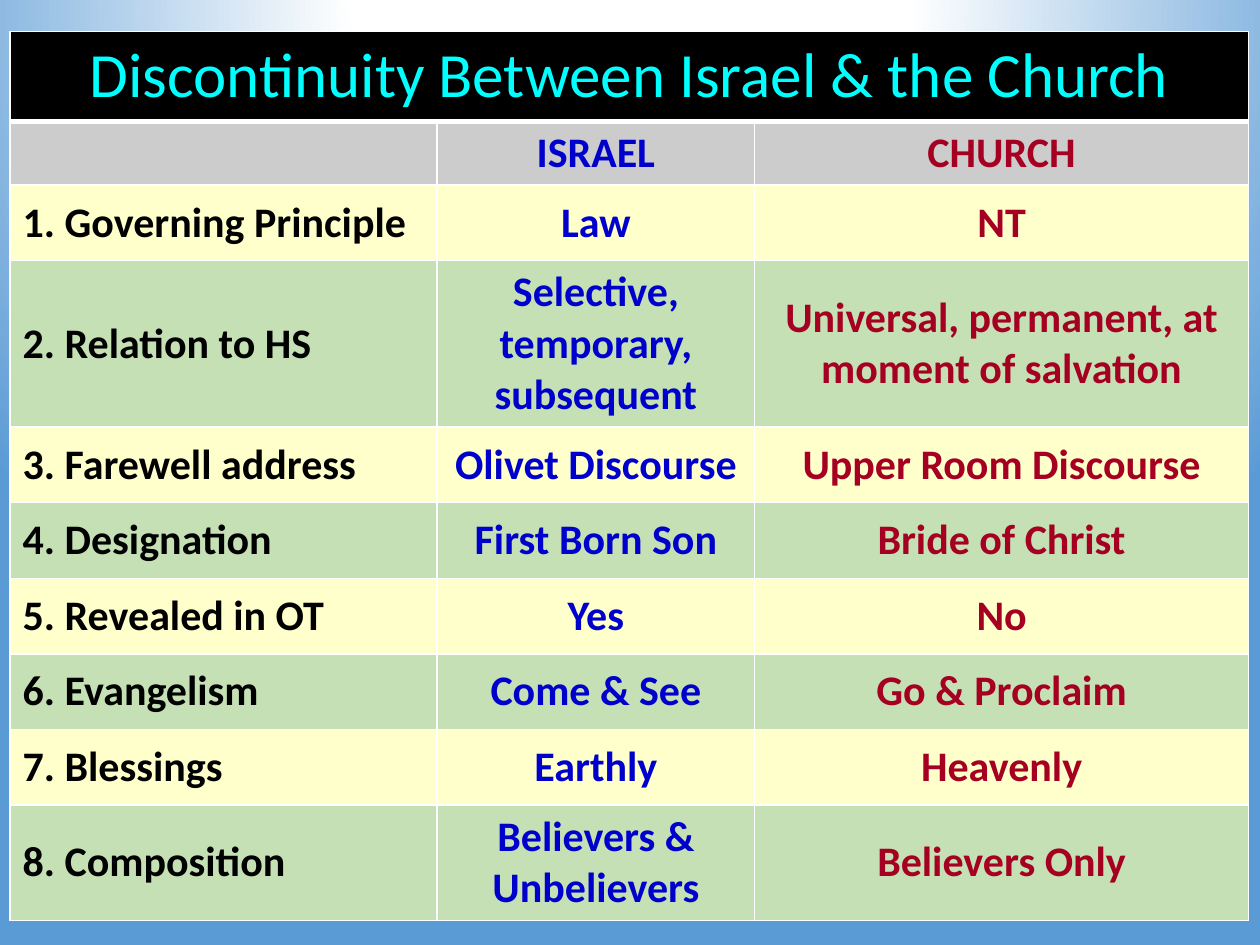
from pptx import Presentation
from pptx import util as u
from pptx.dml.color import RGBColor
from pptx.enum import text as t
from pptx.oxml import parse_xml
from pptx.oxml.ns import nsdecls

WIDE, HIGH = 10, 7.5
COLS = [3.39, 2.52, 3.92]
ROWS = [0.7, 0.5, 0.6, 1.32] + [0.6] * 5 + [0.9]
INKS = ["000000", "0000CC", "A50021"]
BANDS = ["FFFFCC", "C5E0B4"]
TITLE = "Discontinuity Between Israel & the Church"
HEADS = ["", "ISRAEL", "CHURCH"]
FACTS = [
    ("1. Governing Principle", "Law", "NT"),
    ("2. Relation to HS", "Selective, temporary, subsequent",
     "Universal, permanent, at moment of salvation"),
    ("3. Farewell address", "Olivet Discourse", "Upper Room Discourse"),
    ("4. Designation", "First Born Son", "Bride of Christ"),
    ("5. Revealed in OT", "Yes", "No"),
    ("6. Evangelism", "Come & See", "Go & Proclaim"),
    ("7. Blessings", "Earthly", "Heavenly"),
    ("8. Composition", "Believers & Unbelievers", "Believers Only"),
]


def color(code):
    return RGBColor.from_string(code)


def write(cell, words, size=24, ink="000000", bold=True, align="CENTER"):
    cell.vertical_anchor = t.MSO_ANCHOR.MIDDLE
    para = cell.text_frame.paragraphs[0]
    para.alignment = getattr(t.PP_ALIGN, align)
    if words:
        run = para.add_run()
        run.text = words
        font = run.font
        font.name, font.size, font.bold = "Calibri", u.Pt(size), bold
        font.color.rgb = color(ink)


def paint(cell, fill, base=1):
    props = cell._tc.get_or_add_tcPr()
    for side, width in (("L", 1), ("R", 1), ("T", 1), ("B", base)):
        props.append(parse_xml(
            f'<a:ln{side} {nsdecls("a")} w="{u.Pt(width)}"><a:solidFill>'
            f'<a:srgbClr val="FFFFFF"/></a:solidFill></a:ln{side}>'))
    cell.fill.solid()
    cell.fill.fore_color.rgb = color(fill)


def shade(slide):
    stops = "".join(
        f'<a:gs pos="{place * 1000}"><a:srgbClr val="{code}"/></a:gs>'
        for place, code in ((0, "FFFFFF"), (35, "FFFFFF"), (100, "5B9BD5")))
    slide.background.fill.solid()
    props = slide.background._cSld.bg.bgPr
    props.replace(props[0], parse_xml(
        f'<a:gradFill {nsdecls("a")} rotWithShape="1"><a:gsLst>{stops}</a:gsLst>'
        '<a:path path="circle"><a:fillToRect l="50000" t="-80000" r="50000" '
        'b="180000"/></a:path></a:gradFill>'))


def compare(slide, left, top, wide, high):
    frame = slide.shapes.add_table(
        len(ROWS), len(COLS), *map(u.Inches, (left, top, wide, high)))
    table = frame.table
    table.first_row = table.horz_banding = False
    for col, part in zip(table.columns, COLS):
        col.width = u.Inches(wide * part / sum(COLS))
    for row, part in zip(table.rows, ROWS):
        row.height = u.Inches(high * part / sum(ROWS))

    table.cell(0, 0).merge(table.cell(0, len(COLS) - 1))
    for col in range(len(COLS)):
        paint(table.cell(0, col), "000000", base=3)
    write(table.cell(0, 0), TITLE, size=36, ink="00FFFF", bold=False)

    for row, words in enumerate([HEADS] + FACTS, 1):
        fill = BANDS[row % 2] if row > 1 else "CCCCCC"
        for col, (word, ink) in enumerate(zip(words, INKS)):
            cell = table.cell(row, col)
            write(cell, word, ink=ink, align="CENTER" if col else "LEFT")
            paint(cell, fill)


def main():
    deck = Presentation()
    deck.slide_width, deck.slide_height = u.Inches(WIDE), u.Inches(HIGH)
    slide = deck.slides.add_slide(deck.slide_layouts[6])
    shade(slide)
    compare(slide, 0.08, 0.25, sum(COLS), sum(ROWS))
    deck.save("out.pptx")


if __name__ == "__main__":
    main()
